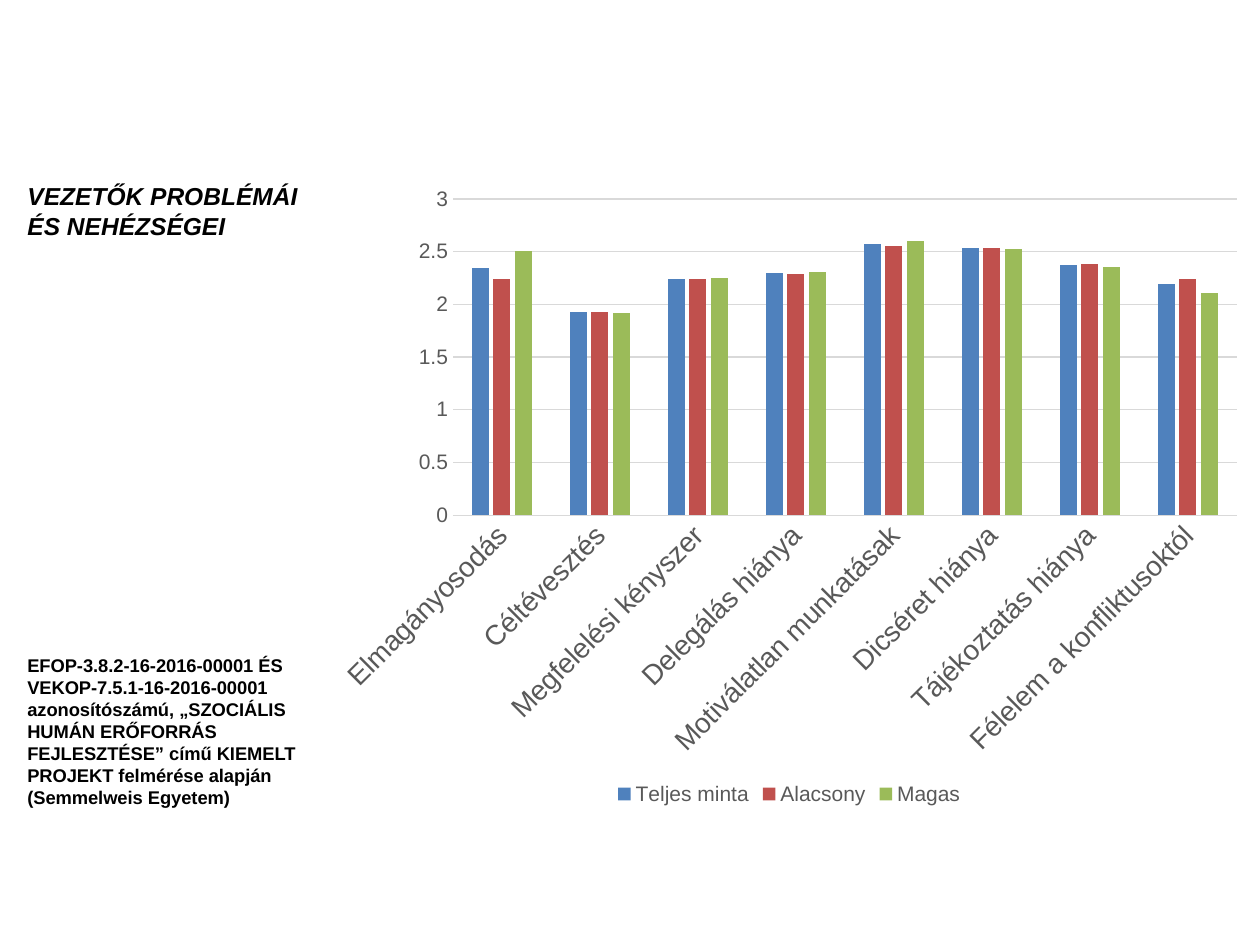
from pptx import Presentation
from pptx.chart.data import CategoryChartData
from pptx.dml.color import RGBColor
from pptx.enum.chart import XL_CHART_TYPE, XL_LEGEND_POSITION, XL_TICK_MARK
from pptx.enum.text import MSO_ANCHOR, PP_ALIGN
from pptx.util import Pt

FONT = "Arial"
GREY = "595959"
GRID = "D9D9D9"

TITLE = "VEZETŐK PROBLÉMÁI ÉS NEHÉZSÉGEI"
SOURCE = (
    "EFOP-3.8.2-16-2016-00001 ÉS VEKOP-7.5.1-16-2016-00001 azonosítószámú, "
    "„SZOCIÁLIS HUMÁN ERŐFORRÁS FEJLESZTÉSE” című KIEMELT PROJEKT "
    "felmérése alapján (Semmelweis Egyetem)"
)
CATEGORIES = [
    "Elmagányosodás", "Céltévesztés", "Megfelelési kényszer",
    "Delegálás hiánya", "Motiválatlan munkatásak", "Dicséret hiánya",
    "Tájékoztatás hiánya", "Félelem a konfliktusoktól",
]
SERIES = [
    ("Teljes minta", "4F81BD", (2.34, 1.93, 2.24, 2.3, 2.57, 2.53, 2.37, 2.19)),
    ("Alacsony", "C0504D", (2.24, 1.93, 2.24, 2.29, 2.55, 2.53, 2.38, 2.24)),
    ("Magas", "9BBB59", (2.51, 1.92, 2.25, 2.31, 2.6, 2.52, 2.35, 2.11)),
]


def color(value):
    return RGBColor.from_string(value)


def format_font(font, size, value):
    font.name = FONT
    font.size = Pt(size)
    font.color.rgb = color(value)


def format_line(line, value):
    line.color.rgb = color(value)
    line.width = Pt(0.75)


def fill_text(shape, box, text, size, italic=False):
    shape.left, shape.top, shape.width, shape.height = map(Pt, box)
    frame = shape.text_frame
    frame.word_wrap = True
    frame.vertical_anchor = MSO_ANCHOR.TOP
    frame.text = text
    paragraph = frame.paragraphs[0]
    paragraph.alignment = PP_ALIGN.LEFT
    paragraph.space_before = Pt(0)
    font = paragraph.runs[0].font
    format_font(font, size, "000000")
    font.bold = True
    font.italic = italic


def add_side_panel(slide, left, top, width, height):
    """Place the title at the top of the box and the source at its foot."""
    title_height, source_height = 50, 93
    fill_text(slide.shapes.title, (left, top, width, title_height),
              TITLE, 14, italic=True)
    source_box = (left, top + height - source_height, width, source_height)
    source = slide.shapes.add_textbox(*map(Pt, source_box))
    fill_text(source, source_box, SOURCE, 10.5)


def add_problem_chart(slide, left, top, width, height):
    data = CategoryChartData()
    data.categories = CATEGORIES
    for name, _, values in SERIES:
        data.add_series(name, values)
    chart = slide.shapes.add_chart(
        XL_CHART_TYPE.COLUMN_CLUSTERED,
        Pt(left), Pt(top), Pt(width), Pt(height), data).chart
    format_font(chart.font, 10, "000000")
    chart.has_title = False

    plot = chart.plots[0]
    plot.vary_by_categories = False
    plot.gap_width = 219
    plot.overlap = -27
    for series, (_, fill, _) in zip(plot.series, SERIES):
        series.format.fill.solid()
        series.format.fill.fore_color.rgb = color(fill)

    category_axis, value_axis = chart.category_axis, chart.value_axis
    for axis, size in ((category_axis, 16), (value_axis, 12)):
        axis.major_tick_mark = XL_TICK_MARK.NONE
        axis.minor_tick_mark = XL_TICK_MARK.NONE
        format_font(axis.tick_labels.font, size, GREY)
    format_line(category_axis.format.line, GRID)
    category_axis._element.txPr.bodyPr.set("rot", "-2700000")
    value_axis.minimum_scale = 0
    value_axis.maximum_scale = 3
    value_axis.major_unit = 0.5
    value_axis.format.line.fill.background()
    value_axis.has_major_gridlines = True
    format_line(value_axis.major_gridlines.format.line, GRID)

    chart.has_legend = True
    chart.legend.position = XL_LEGEND_POSITION.BOTTOM
    chart.legend.include_in_layout = False
    format_font(chart.legend.font, 12, GREY)


def main():
    presentation = Presentation()
    presentation.slide_width = Pt(720)
    presentation.slide_height = Pt(540)
    slide = presentation.slides.add_slide(presentation.slide_layouts[5])
    left, top, height = 8.5, 100, 363
    panel_width, chart_width = 176, 533
    add_side_panel(slide, left, top, panel_width, height)
    add_problem_chart(slide, left + panel_width, top, chart_width, height)
    presentation.save("out.pptx")


if __name__ == "__main__":
    main()
